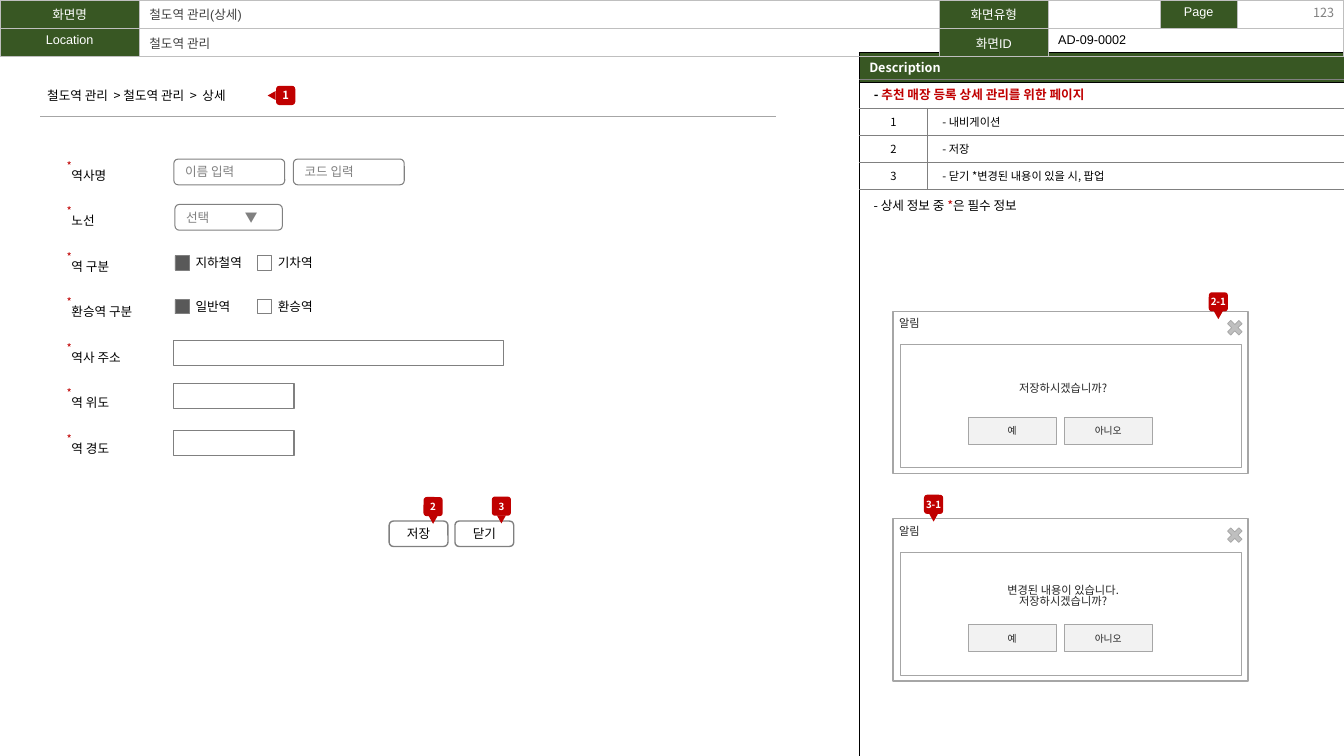
"""Build the station detail screen specification slide."""
from dataclasses import dataclass
from lxml.etree import SubElement
from pptx import Presentation
from pptx.dml.color import RGBColor
from pptx.enum.shapes import MSO_CONNECTOR, MSO_SHAPE
from pptx.enum.text import MSO_ANCHOR, MSO_AUTO_SIZE, PP_ALIGN
from pptx.oxml.ns import qn
from pptx.util import Pt


@dataclass(frozen=True)
class Theme:
    font: str = "Noto Sans CJK KR"
    head: str = "Arial"
    green: str = "385723"
    red: str = "C00000"
    black: str = "000000"
    white: str = "FFFFFF"
    ink: str = "262626"
    dark: str = "404040"
    check: str = "595959"
    gray: str = "808080"
    edge: str = "A6A6A6"
    pale: str = "BFBFBF"
    light: str = "F2F2F2"
    body: int = 9
    note: int = 8
    tiny: int = 7


T = Theme()
RGB = RGBColor.from_string
LEFT, MID, RIGHT = PP_ALIGN.LEFT, PP_ALIGN.CENTER, PP_ALIGN.RIGHT
RECT, ROUND = MSO_SHAPE.RECTANGLE, MSO_SHAPE.ROUNDED_RECTANGLE


def style(frame, size=T.body, color=T.black, bold=False, align=LEFT, face=T.font):
    """Format every paragraph and run of a text frame."""
    for para in frame.paragraphs:
        para.alignment = align
        for run in para.runs:
            run.font.size, run.font.bold, run.font.name = Pt(size), bold, face
            run.font.color.rgb = RGB(color)
            SubElement(run.font._element, qn("a:ea")).set("typeface", T.font)


def put(home, kind, x, y, w, h, text="", fill=None, line=None, width=0.75,
        inset=(7.2, 3.6), wrap=True, **look):
    """Add a shape, or a text box when kind is None."""
    area = Pt(x), Pt(y), Pt(w), Pt(h)
    if kind is None:
        item = home.add_textbox(*area)
    else:
        item = home.add_shape(kind, *area)
        item.shadow.inherit = False
        item.text_frame.vertical_anchor = MSO_ANCHOR.MIDDLE
        if fill:
            item.fill.solid()
            item.fill.fore_color.rgb = RGB(fill)
        if line:
            item.line.color.rgb = RGB(line)
            item.line.width = Pt(width)
        else:
            item.line.fill.background()
    frame = item.text_frame
    frame.word_wrap = wrap
    frame.margin_left = frame.margin_right = Pt(inset[0])
    frame.margin_top = frame.margin_bottom = Pt(inset[1])
    if text:
        frame.text = text
        style(frame, **look)
    return item


deck = Presentation()
deck.slide_width, deck.slide_height = Pt(960), Pt(540)
slide = deck.slides.add_slide(deck.slide_layouts[5])
shapes = slide.shapes

title = shapes.title
title.left, title.top, title.width, title.height = Pt(26.5), Pt(59), Pt(243), Pt(18)
frame = title.text_frame
frame.text = "철도역 관리  > 철도역 관리  >  상세"
frame.auto_size = MSO_AUTO_SIZE.NONE
frame.vertical_anchor = MSO_ANCHOR.TOP
style(frame)

panel = [["Description"], [""]]
notes = [["- ", ""], ["1", "- 내비게이션"], ["2", "- 저장"],
         ["3", "- 닫기 *변경된 내용이 있을 시, 팝업"]]
header = [["화면명", "철도역 관리(상세)", "화면유형", "", "Page", ""],
          ["Location", "철도역 관리", "화면ID", "AD-09-0002", "", ""]]
heads = {"Description", "화면명", "화면유형", "Page", "Location", "화면ID"}
grids = [
    (panel, 613.7, 37.5, [346.3], [21, 481.5], None, T.black, 0.5),
    (notes, 613.7, 57, [49, 297.3], [20.2] + [19.3] * 3, (0, 0, 1), T.gray, 0.75),
    (header, 0, 0, [99.5, 571.5, 77.7, 80, 55, 76.3], [20, 20], (1, 3, 5), T.pale, 1),
]
for texts, x, y, cols, rows, span, edge, width in grids:
    table = shapes.add_table(len(rows), len(cols), Pt(x), Pt(y),
                             Pt(sum(cols)), Pt(sum(rows))).table
    table.first_row = table.horz_banding = False
    table._tbl.tblPr[0].text = "{2D5ABB26-0587-4C30-8999-92F81FD0307C}"
    for col, size in zip(table.columns, cols):
        col.width = Pt(size)
    for row, size in zip(table.rows, rows):
        row.height = Pt(size)
    if span:
        table.cell(span[0], span[1]).merge(table.cell(span[0], span[2]))
    for r, row in enumerate(texts):
        for c, text in enumerate(row):
            cell = table.cell(r, c)
            if cell.is_spanned:
                continue
            sides = "LRTB"
            if texts is notes:
                sides = "LTB" if c else "TB"
                cell.vertical_anchor = MSO_ANCHOR.MIDDLE
                cell.margin_left = Pt(10.5 if text[:1] == "-" else 7.2)
            for side in sides:
                ln = SubElement(cell._tc.get_or_add_tcPr(), qn("a:ln" + side), w=str(Pt(width)))
                SubElement(SubElement(ln, qn("a:solidFill")), qn("a:srgbClr")).set("val", edge)
            if text in heads:
                cell.fill.solid()
                cell.fill.fore_color.rgb = RGB(T.green)
            else:
                cell.fill.background()
            if not text:
                end = cell.text_frame.paragraphs[0]._p.get_or_add_endParaRPr()
                end.set("sz", str(T.body * 100))
                continue
            cell.text_frame.text = text
            goal = text == "- "
            if goal:
                aim = cell.text_frame.paragraphs[0].add_run()
                aim.text = "추천 매장 등록 상세 관리를 위한 페이지"
            color = T.white if text in heads else T.dark if c == 1 and texts is header else T.black
            middle = text.isdigit() or (text in heads and texts is header)
            style(cell.text_frame, T.note if texts is notes and not goal else T.body,
                  color, goal or texts is panel, MID if middle else LEFT,
                  T.head if texts is header else T.font)
            if goal:
                aim.font.color.rgb = RGB(T.red)

put(shapes, None, 743.8, -5.8, 216.2, 28.8, "123", color=T.gray,
    align=RIGHT).text_frame.vertical_anchor = MSO_ANCHOR.MIDDLE
rule = shapes.add_connector(MSO_CONNECTOR.STRAIGHT, Pt(28.6), Pt(83), Pt(554), Pt(83))
rule.line.color.rgb, rule.line.width = RGB(T.edge), Pt(0.5)
SubElement(rule._element.spPr, qn("a:effectLst"))

labels = ["역사명", "노선", "역 구분", "환승역 구분", "역사 주소", "역 위도", "역 경도"]
form = put(shapes, None, 44, 110.9, 80, 218, "\n".join(labels))
for i, para in enumerate(form.text_frame.paragraphs):
    para.line_spacing, para.space_after = Pt(16.2), Pt(16.3)
    put(shapes, None, 40.5, 110.2 + 32.5 * i, 18, 17, "*", inset=(0, 3.6),
        size=T.note, color=T.red, align=MID)

for x, text in [(124.2, "이름 입력"), (209.6, "코드 입력")]:
    put(shapes, ROUND, x, 113.6, 79.2, 18.4, text, T.white, T.gray, color=T.gray)
pick = put(shapes, ROUND, 125, 146, 76.7, 18.4, "선택\t▼", T.white, T.gray, color=T.gray)
tabs = SubElement(pick.text_frame.paragraphs[0]._p.get_or_add_pPr(), qn("a:tabLst"))
SubElement(tabs, qn("a:tab"), pos=str(Pt(42)), algn="l")
for y, pair in [(182.6, ("지하철역", "기차역")), (214, ("일반역", "환승역"))]:
    for x, text, fill in zip((125, 183.8), pair, (T.check, T.white)):
        put(shapes, RECT, x, y, 10.2, 10.2, fill=fill, line=T.gray, width=0.5)
        put(shapes, None, x + 7.6, y - 4, 53, 18, text)
for y, w in [(243.2, 235.7), (273.7, 85.8), (307.3, 85.8)]:
    put(shapes, RECT, 124.2, y, w, 18.2, fill=T.white, line=T.gray)
for x, text in [(278, "저장"), (325, "닫기")]:
    put(shapes, ROUND, x, 372.2, 42, 18.2, text, T.white, T.gray, 1, align=MID)

hint = put(shapes, None, 617, 138, 252, 18, "- 상세 정보 중 ")
para = hint.text_frame.paragraphs[0]
for text in ("*", "은 필수 정보"):
    para.add_run().text = text
style(hint.text_frame)
para.runs[1].font.color.rgb = RGB(T.red)

x = 638
for y, text in [(222.5, "저장하시겠습니까?"), (370.6, "변경된 내용이 있습니다.\n저장하시겠습니까?")]:
    put(shapes, RECT, x, y, 253.4, 116, fill=T.white, line=T.edge, width=1)
    put(shapes, RECT, x + 5, y + 23.8, 244, 88, fill=T.white, line=T.edge)
    for gap, word in [(53.5, "예"), (122.2, "아니오")]:
        put(shapes, RECT, x + gap, y + 75.5, 62.8, 19.5, word, T.light, T.edge, 0.5,
            wrap=False, size=T.tiny, color=T.ink, align=MID)
    ask = put(shapes, None, x + 8, y + 36, 226.8, 39.6, text, inset=(4.3, 2.2),
              size=T.note, color=T.ink, align=MID).text_frame
    ask.vertical_anchor = MSO_ANCHOR.MIDDLE
    for para in ask.paragraphs:
        para.line_spacing = 0.8
    put(shapes, None, x, y + 1.4, 36, 15, "알림", inset=(4.3, 2.2), size=T.note, color=T.ink)
    arm = [(5.2, 2.9), (2.9, 5.2), (0, 2.3)]
    dots = []
    for turn in range(4):
        dots += arm
        arm = [(-b, a) for a, b in arm]
    dots = [(Pt(x + 244 + a), Pt(y + 11.6 + b)) for a, b in dots]
    path = shapes.build_freeform(*dots[0])
    path.add_line_segments(dots[1:], close=True)
    cross = path.convert_to_shape()
    cross.shadow.inherit = False
    cross.fill.solid()
    cross.fill.fore_color.rgb = RGB(T.pale)
    cross.line.color.rgb, cross.line.width = RGB(T.edge), Pt(0.5)

marks = [("1", 197.2, 61.3, 270), ("2", 302.5, 355, 180), ("3", 351.3, 354.7, 180),
         ("2-1", 863.4, 208.8, 180), ("3-1", 660, 353.4, 180)]
for text, x, y, turn in marks:
    group = shapes.add_group_shape().shapes
    dx, dy = (-6.4, 4) if turn == 270 else (3.6, 13.4)
    tip = put(group, MSO_SHAPE.ISOSCELES_TRIANGLE, x + dx, y + dy, 6.5, 5.8, fill=T.red)
    tip.rotation = turn
    put(group, ROUND, x, y, 13.7, 13.7, text, T.red, inset=(0, 0), wrap=False,
        size=T.note if turn == 270 else T.tiny, color=T.white, bold=True, align=MID)

deck.save("out.pptx")
